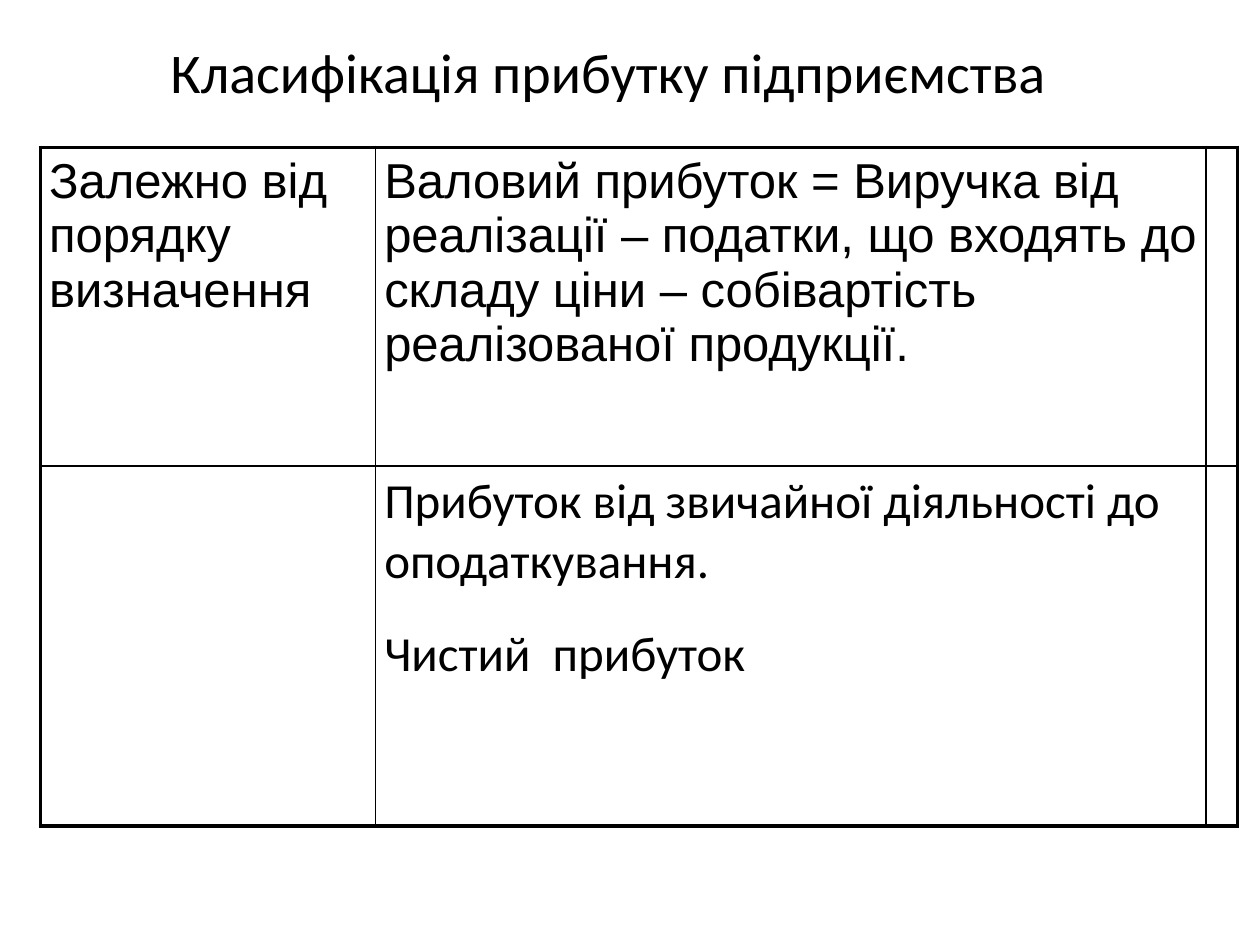
from dataclasses import dataclass

from lxml.etree import SubElement
from pptx import Presentation
from pptx.dml.color import RGBColor
from pptx.enum.text import MSO_ANCHOR as Anchor, PP_ALIGN as Align
from pptx.oxml.ns import qn
from pptx.util import Inches, Pt

WIDTH, HEIGHT = Inches(10), Inches(7.5)


@dataclass(frozen=True)
class Theme:
    ink: str = "000000"
    title_font: str = "Calibri"
    body_font: str = "Arial"
    title_size: float = 32
    body_size: float = 28
    outer_line: float = 2.25
    inner_line: float = 1


@dataclass(frozen=True)
class CellText:
    row: int
    column: int
    paragraphs: tuple[str, ...]
    font: str


THEME = Theme()
TITLE = "Класифікація прибутку підприємства "
TITLE_BOX = (0.087, 0.037, 0.802, 0.085)
TABLE_LEFT, TABLE_TOP = 0.032, 0.156
COLUMN_SHARES = (0.266, 0.659, 0.025)
ROW_SHARES = (0.337, 0.381)
CELLS = (
    CellText(0, 0, ("Залежно від порядку визначення",), THEME.body_font),
    CellText(0, 1, ("Валовий прибуток = Виручка від реалізації – податки, що входять "
                    "до складу ціни – собівартість реалізованої продукції.",), THEME.body_font),
    CellText(1, 1, ("Прибуток від звичайної діяльності до оподаткування.",
                    "Чистий  прибуток"), THEME.title_font),
)


def across(share: float) -> int:
    return round(WIDTH * share)


def down(share: float) -> int:
    return round(HEIGHT * share)


def write(frame, paragraphs: tuple[str, ...], *, font: str, size: float,
          align=Align.LEFT, line_spacing: float = 1.0, gap: float = 0) -> None:
    """Fill a text frame, leaving gap points between paragraphs."""
    frame.word_wrap = True
    for index, text in enumerate(paragraphs):
        paragraph = frame.add_paragraph() if index else frame.paragraphs[0]
        paragraph.alignment = align
        paragraph.line_spacing = line_spacing
        paragraph.space_before = Pt(gap if index else 0)
        run = paragraph.add_run()
        run.text = text
        run.font.name = font
        run.font.size = Pt(size)
        run.font.color.rgb = RGBColor.from_string(THEME.ink)


def draw_borders(cell, outer_edges: dict[str, bool]) -> None:
    """Rule each edge, heavier where it lies on the table's outline."""
    properties = cell._tc.get_or_add_tcPr()
    for position, (edge, is_outer) in enumerate(outer_edges.items()):
        width = THEME.outer_line if is_outer else THEME.inner_line
        line = SubElement(properties, qn(f"a:{edge}"), w=str(Pt(width)))
        fill = SubElement(line, qn("a:solidFill"))
        SubElement(fill, qn("a:srgbClr"), val=THEME.ink)
        properties.remove(line)
        properties.insert(position, line)


def draw_title(slide) -> None:
    left, top, width, height = TITLE_BOX
    box = slide.shapes.add_textbox(across(left), down(top), across(width), down(height))
    box.text_frame.vertical_anchor = Anchor.MIDDLE
    write(box.text_frame, (TITLE,), font=THEME.title_font, size=THEME.title_size,
          align=Align.CENTER, line_spacing=0.9)


def draw_table(slide) -> None:
    row_count, column_count = len(ROW_SHARES), len(COLUMN_SHARES)
    table = slide.shapes.add_table(
        row_count, column_count, across(TABLE_LEFT), down(TABLE_TOP),
        across(sum(COLUMN_SHARES)), down(sum(ROW_SHARES))).table
    table.first_row = table.horz_banding = False
    for column, share in zip(table.columns, COLUMN_SHARES):
        column.width = across(share)
    for row, share in zip(table.rows, ROW_SHARES):
        row.height = down(share)
    for row in range(row_count):
        for column in range(column_count):
            cell = table.cell(row, column)
            cell.margin_left = cell.margin_right = Inches(0.07)
            cell.margin_top = cell.margin_bottom = Inches(0.05)
            cell.fill.background()
            draw_borders(cell, {"lnL": column == 0, "lnR": column == column_count - 1,
                                "lnT": row == 0, "lnB": row == row_count - 1})
    for entry in CELLS:
        write(table.cell(entry.row, entry.column).text_frame, entry.paragraphs,
              font=entry.font, size=THEME.body_size, gap=19)


def main() -> None:
    presentation = Presentation()
    presentation.slide_width, presentation.slide_height = WIDTH, HEIGHT
    slide = presentation.slides.add_slide(presentation.slide_layouts[6])
    draw_title(slide)
    draw_table(slide)
    presentation.save("out.pptx")


if __name__ == "__main__":
    main()
